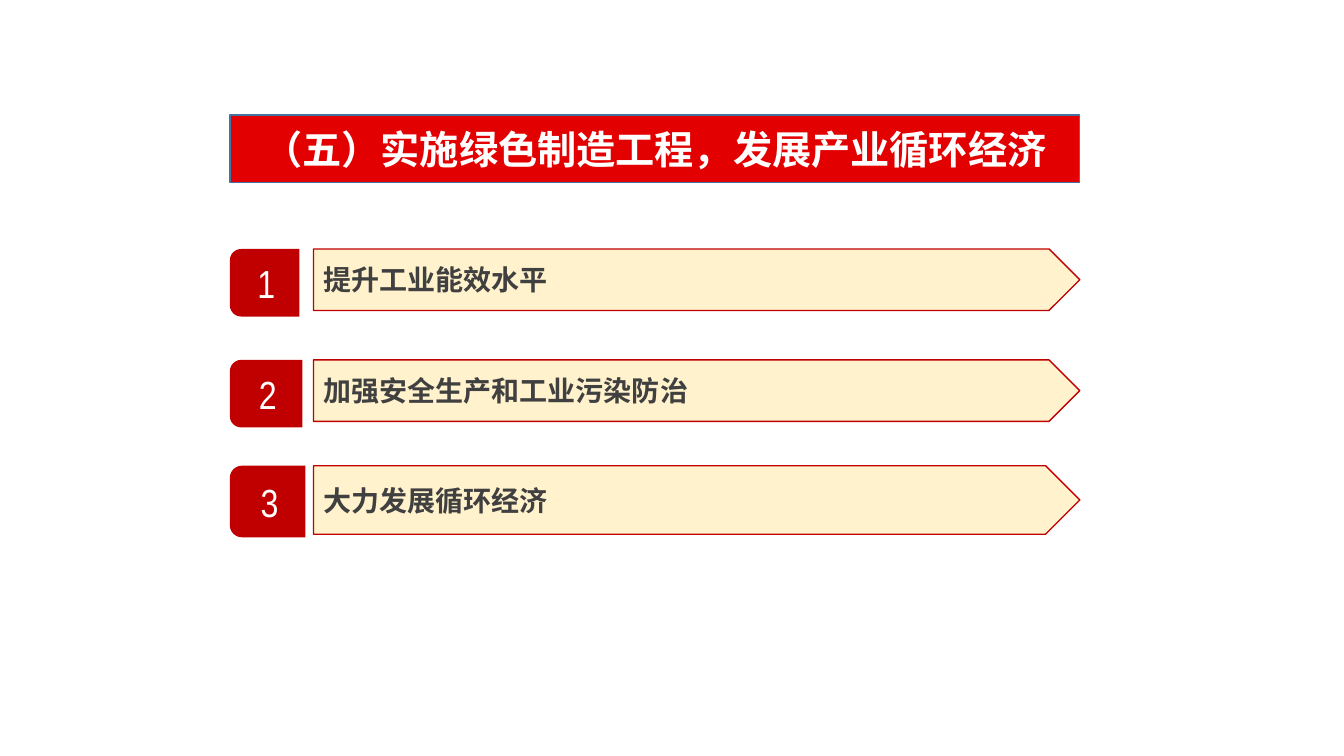
"""Build a slide with a title banner above three numbered arrows."""
from dataclasses import dataclass

from lxml.etree import SubElement
from pptx import Presentation
from pptx.dml.color import RGBColor
from pptx.enum.shapes import MSO_SHAPE
from pptx.enum.text import MSO_ANCHOR, PP_ALIGN
from pptx.oxml.ns import qn
from pptx.shapes.autoshape import Shape
from pptx.slide import Slide
from pptx.util import Inches, Pt

RED = RGBColor(0xC0, 0x00, 0x00)
BANNER_RED = RGBColor(0xE3, 0x00, 0x00)
BANNER_DARK = RGBColor(0x76, 0x03, 0x03)
BANNER_EDGE = RGBColor(0x43, 0x73, 0x9E)
CREAM = RGBColor(0xFF, 0xF2, 0xCC)
GREY = RGBColor(0x40, 0x40, 0x40)
WHITE = RGBColor(0xFF, 0xFF, 0xFF)
CHINESE_FONT = "Noto Sans CJK SC"
LEFT = 2.28
RIGHT = 10.71
ARROW_LEFT = 3.11


@dataclass(frozen=True)
class Measure:
    text: str
    top: float
    arrow_height: float
    badge_width: float
    badge_height: float


MEASURES = [
    Measure("提升工业能效水平", 2.47, 0.61, 0.69, 0.67),
    Measure("加强安全生产和工业污染防治", 3.57, 0.61, 0.72, 0.67),
    Measure("大力发展循环经济", 4.62, 0.68, 0.75, 0.71),
]


def add_box(slide: Slide, kind: MSO_SHAPE, left: float, top: float,
            width: float, height: float) -> Shape:
    box = slide.shapes.add_shape(
        kind, Inches(left), Inches(top), Inches(width), Inches(height))
    box.shadow.inherit = False
    return box


def write_text(box: Shape, text: str, *, size: int, font: str, color: RGBColor,
               bold: bool = False, align: PP_ALIGN = PP_ALIGN.CENTER) -> None:
    frame = box.text_frame
    frame.word_wrap = True
    frame.vertical_anchor = MSO_ANCHOR.MIDDLE
    para = frame.paragraphs[0]
    para.alignment = align
    span = para.add_run()
    span.text = text
    span.font.size = Pt(size)
    span.font.bold = bold
    span.font.color.rgb = color
    span.font.name = font
    SubElement(span.font._element, qn("a:ea"), typeface=CHINESE_FONT)


def add_banner(slide: Slide, text: str) -> None:
    banner = add_box(slide, MSO_SHAPE.FLOWCHART_PROCESS,
                     LEFT, 1.14, RIGHT - LEFT, 0.67)
    banner.fill.gradient()
    banner.fill.gradient_angle = 270
    stops = [(0.99, BANNER_RED), (1.0, BANNER_DARK)]
    for stop, (position, color) in zip(banner.fill.gradient_stops, stops):
        stop.position = position
        stop.color.rgb = color
    banner.line.color.rgb = BANNER_EDGE
    banner.line.width = Pt(1)
    write_text(banner, text, size=28, font="Calibri", color=WHITE, bold=True)


def add_arrow(slide: Slide, measure: Measure) -> None:
    arrow = add_box(slide, MSO_SHAPE.PENTAGON, ARROW_LEFT, measure.top,
                    RIGHT - ARROW_LEFT, measure.arrow_height)
    arrow.fill.solid()
    arrow.fill.fore_color.rgb = CREAM
    arrow.line.color.rgb = RED
    arrow.line.width = Pt(1)
    write_text(arrow, measure.text, size=20, font=CHINESE_FONT, color=GREY,
               bold=True, align=PP_ALIGN.LEFT)


def add_badge(slide: Slide, number: int, measure: Measure) -> None:
    width, height = measure.badge_width, measure.badge_height
    shift = (width - height) / 2
    badge = add_box(slide, MSO_SHAPE.ROUND_2_SAME_RECTANGLE,
                    LEFT + shift, measure.top - shift, height, width)
    badge.rotation = 270
    badge.fill.solid()
    badge.fill.fore_color.rgb = RED
    badge.line.fill.background()
    badge.text_frame._txBody.bodyPr.set("vert", "vert")
    write_text(badge, str(number), size=28, font="Arial Narrow", color=WHITE)


def main() -> None:
    deck = Presentation()
    deck.slide_width, deck.slide_height = Inches(13.33), Inches(7.5)
    page = deck.slides.add_slide(deck.slide_layouts[6])
    add_banner(page, "（五）实施绿色制造工程，发展产业循环经济")
    for number, measure in enumerate(MEASURES, start=1):
        add_arrow(page, measure)
        add_badge(page, number, measure)
    deck.save("out.pptx")


if __name__ == "__main__":
    main()
